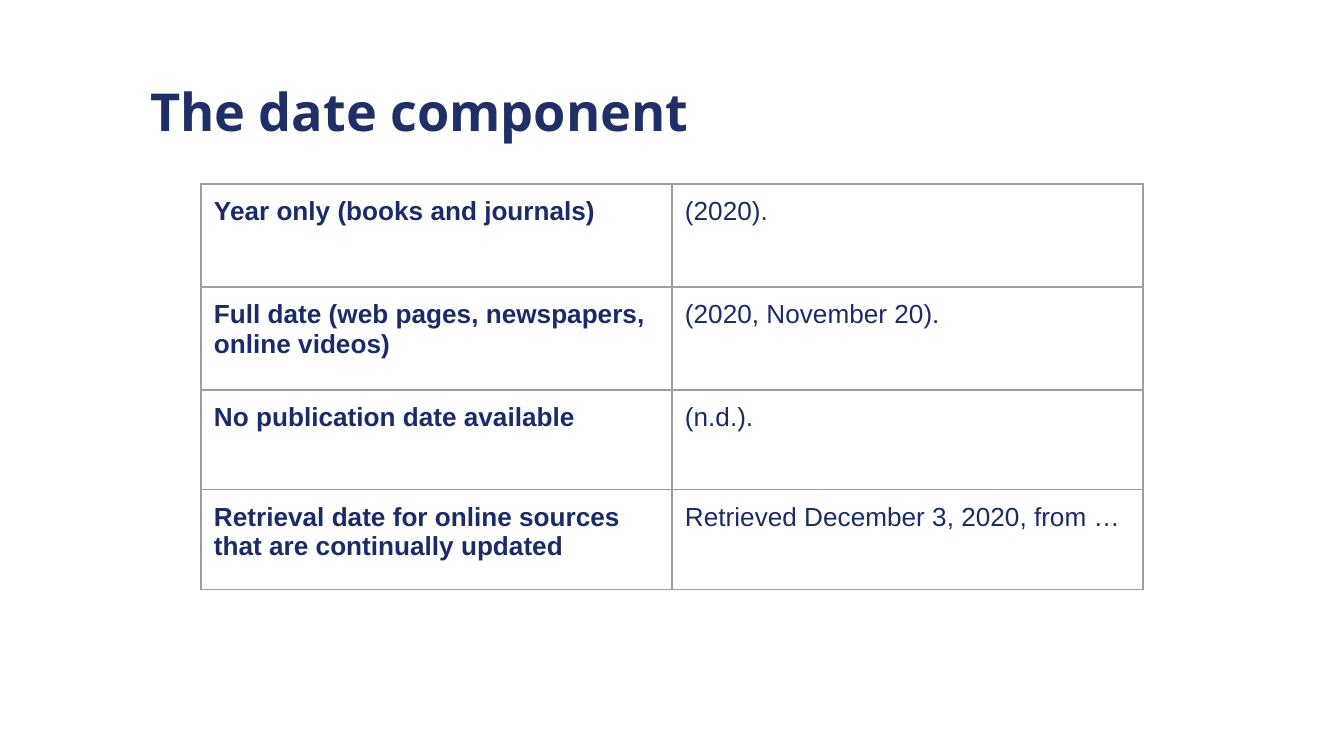
"""Build the slide on the date component of a reference."""
from lxml import etree
from pptx import Presentation
from pptx.dml.color import RGBColor
from pptx.enum.text import MSO_ANCHOR
from pptx.oxml.ns import qn
from pptx.util import Pt

TOP = MSO_ANCHOR.TOP
COLORS = {"title": "202F66", "text": "1B2B68", "border": "9E9E9E"}
TITLE = "The date component"
ROWS = [
    ("Year only (books and journals)", "(2020)."),
    ("Full date (web pages, newspapers, online videos)", "(2020, November 20)."),
    ("No publication date available", "(n.d.)."),
    ("Retrieval date for online sources that are continually updated",
     "Retrieved December 3, 2020, from …"),
]
SLIDE_W, SLIDE_H = 1344, 756
TITLE_BOX = (137, 66, 1058, 85)
TABLE_LEFT, TABLE_TOP, COL_W = 201, 184, 471
ROW_HEIGHTS = [103, 103, 100, 100]
INSET = 13
BORDER_PT = 0.75


def px(n):
    return round(n * 9144000 / SLIDE_W)


def set_margins(box):
    box.margin_left = box.margin_right = px(INSET)
    box.margin_top = box.margin_bottom = px(INSET)


def style(p, name, size, color, bold):
    p.font.name = name
    p.font.size = Pt(size)
    p.font.bold = bold
    p.font.color.rgb = RGBColor.from_string(COLORS[color])


def add_borders(cell):
    tcPr = cell._tc.get_or_add_tcPr()
    for i, side in enumerate(("lnL", "lnR", "lnT", "lnB")):
        ln = etree.Element(qn(f"a:{side}"), w=str(Pt(BORDER_PT)))
        fill = etree.SubElement(ln, qn("a:solidFill"))
        etree.SubElement(fill, qn("a:srgbClr"), val=COLORS["border"])
        tcPr.insert(i, ln)


def add_title(slide):
    sp = slide.shapes.add_textbox(*map(px, TITLE_BOX))
    tf = sp.text_frame
    tf.word_wrap = True
    tf.vertical_anchor = TOP
    set_margins(tf)
    tf.text = TITLE
    style(tf.paragraphs[0], "Open Sans", 28, "title", True)


def add_date_table(slide):
    frame = slide.shapes.add_table(len(ROWS), 2, px(TABLE_LEFT), px(TABLE_TOP),
                                   px(2 * COL_W), px(sum(ROW_HEIGHTS)))
    table = frame.table
    table.first_row = table.horz_banding = False
    for col in table.columns:
        col.width = px(COL_W)
    for r, (texts, height) in enumerate(zip(ROWS, ROW_HEIGHTS)):
        table.rows[r].height = px(height)
        for c, text in enumerate(texts):
            cell = table.cell(r, c)
            cell.text = text
            cell.vertical_anchor = TOP
            set_margins(cell)
            cell.fill.background()
            add_borders(cell)
            style(cell.text_frame.paragraphs[0], "Arial", 14, "text", c == 0)


def main():
    prs = Presentation()
    prs.slide_width, prs.slide_height = px(SLIDE_W), px(SLIDE_H)
    slide = prs.slides.add_slide(prs.slide_layouts[6])
    add_title(slide)
    add_date_table(slide)
    prs.save("out.pptx")


if __name__ == "__main__":
    main()
